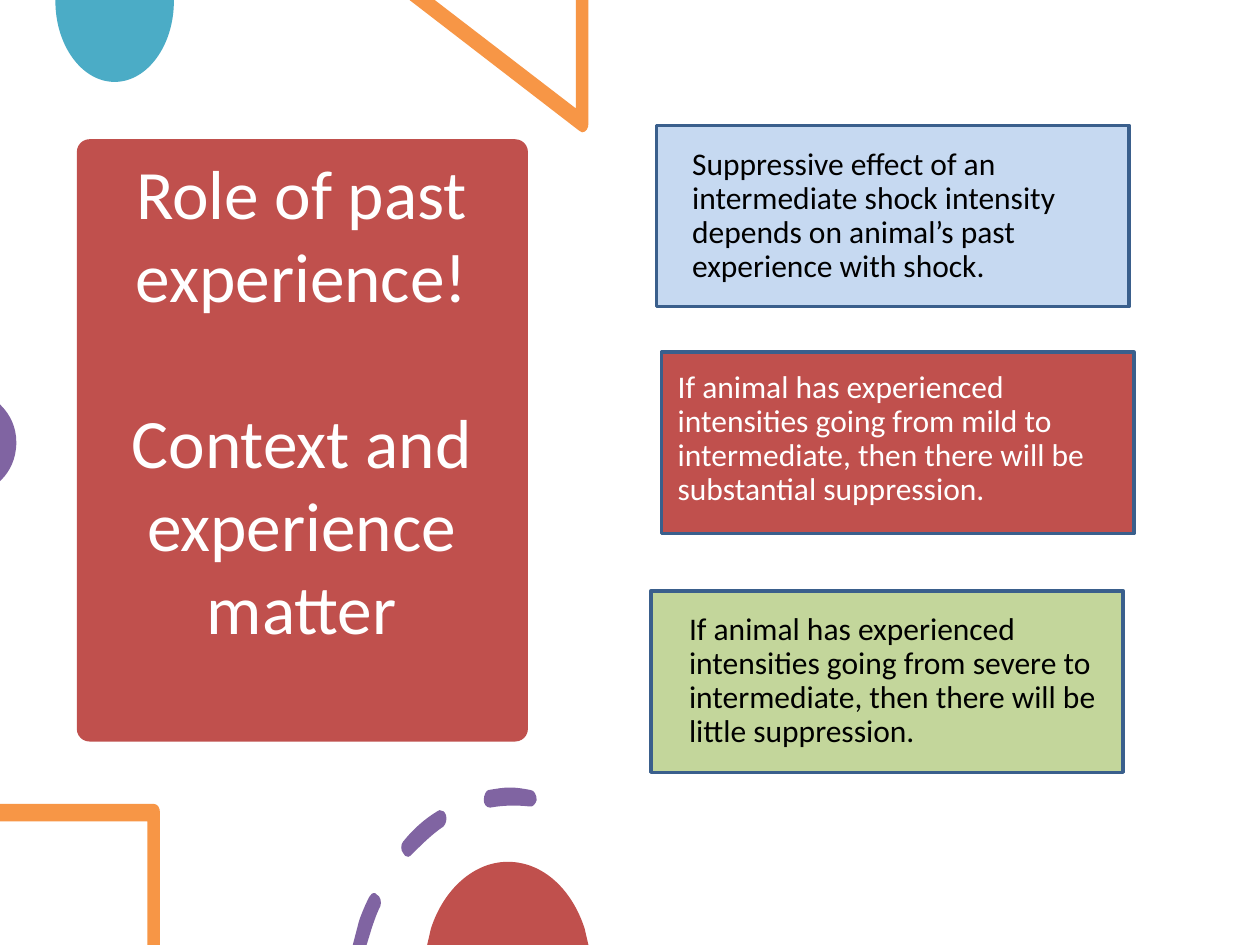
from dataclasses import dataclass

from lxml import etree
from pptx import Presentation
from pptx.dml.color import RGBColor
from pptx.enum.shapes import MSO_SHAPE
from pptx.enum.text import MSO_ANCHOR, PP_ALIGN
from pptx.oxml.ns import qn
from pptx.util import Inches, Pt

RECTANGLE, ROUNDED = MSO_SHAPE.RECTANGLE, MSO_SHAPE.ROUNDED_RECTANGLE
TOP, MIDDLE = MSO_ANCHOR.TOP, MSO_ANCHOR.MIDDLE
LEFT, CENTER = PP_ALIGN.LEFT, PP_ALIGN.CENTER
SLIDE_WIDTH, SLIDE_HEIGHT = Inches(10), Inches(7.5)
COLUMNS = 100
UNIT = SLIDE_WIDTH / COLUMNS


@dataclass(frozen=True)
class Theme:
    """Colours, font and type sizes of the slide."""
    font: str = "Calibri"
    title_size: float = 39.6
    body_size: float = 18
    white: str = "FFFFFF"
    black: str = "000000"
    red: str = "C0504D"
    teal: str = "4BACC6"
    orange: str = "F79646"
    purple: str = "8064A2"
    pale_blue: str = "C6D9F1"
    pale_green: str = "C3D69B"
    border: str = "3A5F8C"


THEME = Theme()

TITLE = "Role of past experience!\v\vContext and experience matter\v"

CARDS = [
    ((51.65, 46.9), THEME.pale_green, (53.7, 48.2, 36.8), THEME.black,
     "If animal has experienced intensities going from severe to intermediate, "
     "then there will be little suppression."),
    ((52.5, 27.95), THEME.red, (52.8, 29, 35.5), THEME.white,
     "If animal has experienced intensities going from mild to intermediate, "
     "then there will be substantial suppression."),
    ((52.1, 9.95), THEME.pale_blue, (53.95, 11.25, 33.2), THEME.black,
     "Suppressive effect of an intermediate shock intensity depends on "
     "animal’s past experience with shock."),
]
CARD_SIZE = (37.5, 14.4)
CARD_TEXT_HEIGHT = 11.9

TEAL_DROP = [[(13.8, 0), (4.4, 0), (4.4, 0.1), (4.4, 3.6, 6.5, 6.5, 9.1, 6.5),
              (11.7, 6.5, 13.8, 3.6, 13.8, 0.1)]]
ORANGE_TRIANGLE = [[(46.7, 0), (45.7, 0), (45.7, 8.6), (34.5, 0), (32.5, 0),
                    (46, 10.4), (46.1, 10.5, 46.1, 10.5, 46.2, 10.5),
                    (46.5, 10.5, 46.7, 10.2, 46.7, 9.8)]]
PURPLE_EDGE = [[(0, 32.1), (0, 38.2), (0.1, 38.1), (0.8, 37.4, 1.3, 36.4, 1.3, 35.1),
                (1.3, 33.9, 0.8, 32.9, 0.1, 32.2)]]
ORANGE_CORNER = [[(12.2, 63.8), (0, 63.8), (0, 65.2), (11.7, 65.2), (11.7, 75),
                  (12.7, 75), (12.7, 64.5), (12.7, 64.1, 12.5, 63.8, 12.2, 63.8)]]
PURPLE_DASHES = [
    [(29.8, 70.9), (29.6, 70.8, 29.4, 71, 29.3, 71.2), (29, 71.8, 28.7, 72.5, 28.5, 73.1),
     (28, 75), (29.1, 75), (29.5, 73.7), (29.7, 73.1, 29.9, 72.5, 30.2, 71.9),
     (30.3, 71.6, 30.2, 71.1, 29.9, 71), (29.9, 70.9, 29.8, 70.9, 29.8, 70.9)],
    [(34.9, 64.3), (34.8, 64.3, 34.8, 64.3, 34.7, 64.4), (33.7, 65, 32.8, 65.8, 32, 66.8),
     (31.8, 67, 31.8, 67.5, 32, 67.7), (32.1, 67.9, 32.2, 68, 32.4, 68),
     (32.5, 68, 32.6, 67.9, 32.7, 67.8), (33.5, 67, 34.3, 66.2, 35.2, 65.6),
     (35.4, 65.4, 35.5, 65, 35.4, 64.7), (35.3, 64.4, 35.1, 64.3, 34.9, 64.3)],
    [(40.5, 62.5), (39.9, 62.5, 39.4, 62.6, 38.8, 62.7), (38.6, 62.7, 38.4, 63.1, 38.4, 63.5),
     (38.4, 63.8, 38.6, 64.1, 38.9, 64.1), (40, 63.9, 41, 63.9, 42, 64),
     (42.3, 64.1, 42.5, 63.8, 42.6, 63.5), (42.6, 63.1, 42.4, 62.7, 42.1, 62.7),
     (41.6, 62.6, 41, 62.5, 40.5, 62.5)],
]
RED_DOME = [[(40.3, 68.4), (37.6, 68.4, 35.2, 70.6, 34.2, 73.7), (33.9, 75), (46.7, 75),
             (46.4, 73.7), (45.4, 70.6, 43.1, 68.4, 40.3, 68.4)]]

DECORATIONS = [
    (TEAL_DROP, THEME.teal),
    (ORANGE_TRIANGLE, THEME.orange),
    (PURPLE_EDGE, THEME.purple),
    (ORANGE_CORNER, THEME.orange),
    (PURPLE_DASHES, THEME.purple),
    (RED_DOME, THEME.red),
]


def grid(*values):
    """Turn grid units into slide lengths."""
    return [round(value * UNIT) for value in values]


def style_shape(shape, fill, border=None):
    """Give a shape a flat fill and an optional border."""
    shape.shadow.inherit = False
    shape.fill.solid()
    shape.fill.fore_color.rgb = RGBColor.from_string(fill)
    if border:
        shape.line.color.rgb = RGBColor.from_string(border)
        shape.line.width = Pt(2)
    else:
        shape.line.fill.background()


def add_panel(slide, kind, box, fill, border=None):
    """Add a preset shape on the grid."""
    shape = slide.shapes.add_shape(kind, *grid(*box))
    style_shape(shape, fill, border)
    return shape


def bend_segments(shape, steps):
    """Turn the segments of six-number steps into cubic curves."""
    segments = list(shape._element.iter(qn("a:lnTo")))
    for segment, step in zip(segments, steps):
        if len(step) == 6:
            curve = etree.Element(qn("a:cubicBezTo"))
            lengths = grid(*step)
            for x, y in zip(lengths[::2], lengths[1::2]):
                etree.SubElement(curve, qn("a:pt"), x=str(x - shape.left), y=str(y - shape.top))
            segment.getparent().replace(segment, curve)


def add_outline(slide, contours, fill):
    """Add a filled freeform made of closed contours."""
    builder = slide.shapes.build_freeform(*grid(*contours[0][0]))
    for index, (start, *steps) in enumerate(contours):
        if index:
            builder.move_to(*grid(*start))
        builder.add_line_segments([grid(*step[-2:]) for step in steps])
    shape = builder.convert_to_shape()
    bend_segments(shape, [step for contour in contours for step in contour[1:]])
    style_shape(shape, fill)


def add_text(slide, box, text, size, color, anchor=TOP, alignment=LEFT):
    """Add a wrapping text box and return its paragraph."""
    frame = slide.shapes.add_textbox(*grid(*box)).text_frame
    frame.word_wrap = True
    frame.vertical_anchor = anchor
    frame.text = text
    paragraph = frame.paragraphs[0]
    paragraph.alignment = alignment
    paragraph.font.name = THEME.font
    paragraph.font.size = Pt(size)
    paragraph.font.color.rgb = RGBColor.from_string(color)
    return paragraph


def add_title(slide):
    """Add the title panel with its two statements."""
    panel = add_panel(slide, ROUNDED, (6.1, 11.05, 35.8, 47.8), THEME.red)
    panel.adjustments[0] = 0.028
    add_text(slide, (7.8, 12.2, 32.3, 45.6), TITLE, THEME.title_size,
             THEME.white, MIDDLE, CENTER)


def add_card_text(slide, box, color, text):
    """Add the statement that belongs on a card."""
    paragraph = add_text(slide, box + (CARD_TEXT_HEIGHT,), text, THEME.body_size, color)
    paragraph.line_spacing = 0.9
    paragraph.space_after = Pt(6)


def main():
    """Build the slide and save it."""
    presentation = Presentation()
    presentation.slide_width, presentation.slide_height = SLIDE_WIDTH, SLIDE_HEIGHT
    slide = presentation.slides.add_slide(presentation.slide_layouts[6])
    add_title(slide)
    for contours, fill in DECORATIONS:
        add_outline(slide, contours, fill)
    for corner, fill, *_ in reversed(CARDS):
        add_panel(slide, RECTANGLE, corner + CARD_SIZE, fill, THEME.border)
    for _, _, box, color, text in CARDS:
        add_card_text(slide, box, color, text)
    presentation.save("out.pptx")


if __name__ == "__main__":
    main()
